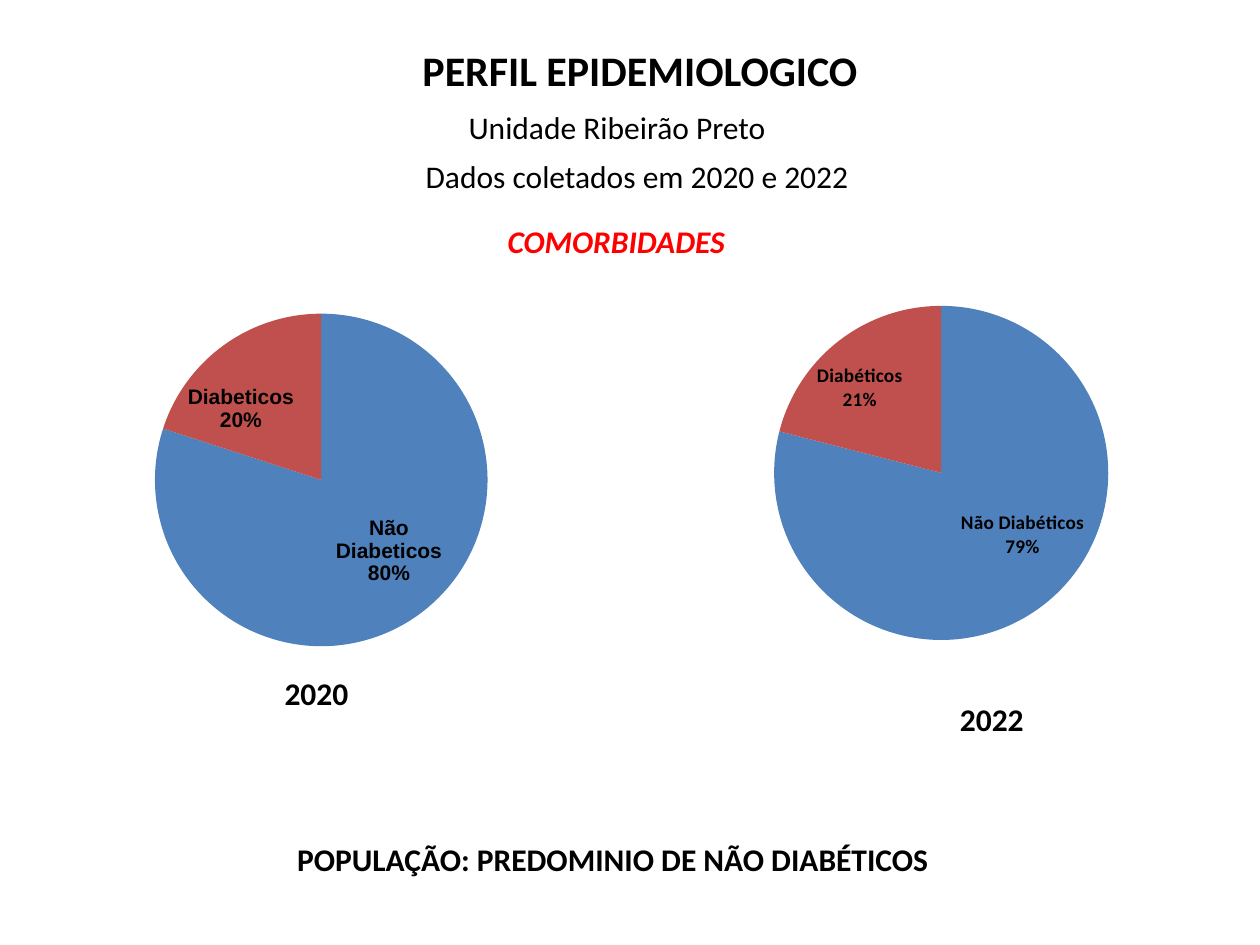
from lxml import etree
from pptx import Presentation
from pptx.chart.data import CategoryChartData
from pptx.dml.color import RGBColor
from pptx.enum.chart import XL_CHART_TYPE as ChartType, XL_LABEL_POSITION as LabelPosition
from pptx.enum.text import MSO_ANCHOR, MSO_AUTO_SIZE, PP_ALIGN
from pptx.oxml import parse_xml
from pptx.oxml.ns import nsdecls, qn
from pptx.util import Inches, Pt

BLACK = RGBColor(0, 0, 0)
RED = RGBColor(0xFF, 0, 0)
SLICE_COLORS = [RGBColor(0x4F, 0x81, 0xBD), RGBColor(0xC0, 0x50, 0x4D)]

TITLE = "PERFIL EPIDEMIOLOGICO"
TEXTS = [
    ("Unidade Ribeirão Preto", (3.62, 0.81, 2.59), BLACK, False, False),
    ("Dados coletados em 2020 e 2022", (3.28, 1.2, 3.6), BLACK, False, False),
    ("COMORBIDADES", (3.93, 1.71, 1.96), RED, True, True),
    ("2020", (2.16, 5.3, 0.71), BLACK, True, False),
    ("2022", (7.52, 5.51, 0.71), BLACK, True, False),
    ("POPULAÇÃO: PREDOMINIO DE NÃO DIABÉTICOS", (2.26, 6.62, 5.26), BLACK, True, False),
]
CHARTS = [
    {
        "box": (0, 2.16, 5, 3),
        "plot": (0.05, 0.11, 0.92, 0.88),
        "slices": [("Não Diabeticos", 80, (0.03, 0.01)), ("Diabeticos", 20, (-0.05, -0.01))],
        "font": ("Arial", 12),
    },
    {
        "box": (5.07, 2.16, 4.8, 2.98),
        "plot": (0.03, 0.09, 0.94, 0.89),
        "slices": [("Não Diabéticos", 79, (0.05, -0.01)), ("Diabéticos", 21, (-0.05, -0.05))],
        "font": ("Calibri", 11),
    },
]


def format_font(font, name, size, color=BLACK, bold=False, italic=False):
    font.name = name
    font.size = Pt(size)
    font.color.rgb = color
    font.bold = bold
    font.italic = italic


def manual_layout(**settings):
    layout = parse_xml(f"<c:layout {nsdecls('c')}><c:manualLayout/></c:layout>")
    for tag, value in settings.items():
        etree.SubElement(layout[0], qn(f"c:{tag}")).set("val", str(value))
    return layout


def show_category_and_percent(labels):
    for tag, value in (("showVal", "0"), ("showCatName", "1"), ("showPercent", "1")):
        labels.find(qn(f"c:{tag}")).set("val", value)
    separator = parse_xml(f"<c:separator {nsdecls('c')}>\n</c:separator>")
    labels.find(qn("c:showBubbleSize")).addnext(separator)


def add_title(slide):
    title = slide.shapes.title
    title.left, title.top, title.width, title.height = map(Inches, (2.06, 0.3, 6.04, 0.5))
    frame = title.text_frame
    frame.auto_size = MSO_AUTO_SIZE.NONE
    frame.vertical_anchor = MSO_ANCHOR.TOP
    paragraph = frame.paragraphs[0]
    paragraph.alignment = PP_ALIGN.CENTER
    run = paragraph.add_run()
    run.text = TITLE
    format_font(run.font, "Calibri", 24, bold=True)


def add_text(slide, text, place, color, bold, italic):
    box = slide.shapes.add_textbox(*map(Inches, (*place, 0.4)))
    box.text_frame.word_wrap = False
    box.text_frame.auto_size = MSO_AUTO_SIZE.SHAPE_TO_FIT_TEXT
    run = box.text_frame.paragraphs[0].add_run()
    run.text = text
    format_font(run.font, "Calibri", 18, color, bold, italic)


def add_pie(slide, box, plot, slices, font):
    data = CategoryChartData()
    data.categories = [name for name, _, _ in slices]
    data.add_series("Series 1", [value for _, value, _ in slices])
    chart = slide.shapes.add_chart(ChartType.PIE, *map(Inches, box), data).chart
    chart.has_legend = False
    chart.has_title = False
    format_font(chart.font, "Calibri", 10)

    plot_area = chart.plots[0]
    plot_area.vary_by_categories = True
    area = chart._chartSpace.chart.plotArea
    for old_layout in area.findall(qn("c:layout")):
        area.remove(old_layout)
    x, y, w, h = plot
    area.insert(0, manual_layout(
        layoutTarget="inner", xMode="edge", yMode="edge", x=x, y=y, w=w, h=h))

    series = plot_area.series[0]
    for index, (_, _, (dx, dy)) in enumerate(slices):
        point = series.points[index]
        point.format.fill.solid()
        point.format.fill.fore_color.rgb = SLICE_COLORS[index]
        label = point.data_label
        format_font(label.font, *font, bold=True)
        label.position = LabelPosition.CENTER
        element = series._element.find(qn("c:dLbls")).findall(qn("c:dLbl"))[index]
        element.find(qn("c:idx")).addnext(manual_layout(x=dx, y=dy))
        show_category_and_percent(element)

    labels = series.data_labels
    format_font(labels.font, *font, bold=True)
    labels.show_value = False
    labels.show_category_name = True
    labels.show_percentage = True


def main():
    presentation = Presentation()
    presentation.slide_width, presentation.slide_height = Inches(10), Inches(7.5)
    slide = presentation.slides.add_slide(presentation.slide_layouts[5])
    add_title(slide)
    for text in TEXTS:
        add_text(slide, *text)
    for chart in CHARTS:
        add_pie(slide, **chart)
    presentation.save("out.pptx")


if __name__ == "__main__":
    main()
